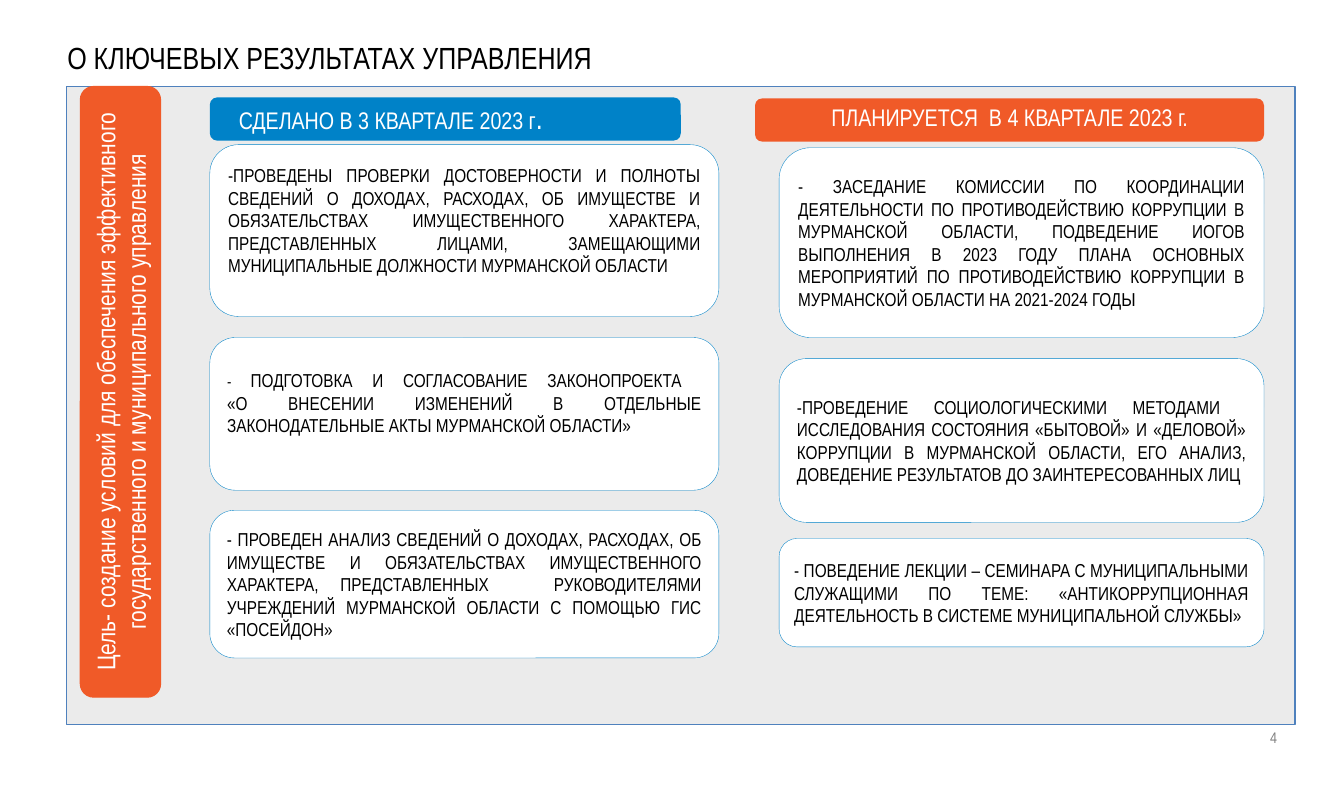
"""Build the slide on the key results of the department."""
import pptx
import pptx.dml.color
import pptx.enum.shapes
import pptx.enum.text
import pptx.util

Inches = pptx.util.Inches
Pt = pptx.util.Pt
SHAPES = pptx.enum.shapes.MSO_SHAPE
ALIGN = pptx.enum.text.PP_ALIGN
ANCHOR = pptx.enum.text.MSO_ANCHOR

CM_PER_INCH = 2.54
FONT = "Arial Narrow"
CARD_SIZE = 13.4
COLORS = {
    "white": "FFFFFF",
    "black": "000000",
    "panel": "EBEBEB",
    "frame": "4F81BD",
    "done": "0082C8",
    "planned": "F05A28",
    "number": "808080",
}
DONE = {
    "left": 2.09,
    "width": 5.07,
    "cards": [
        (1.44, 1.71, 0.25, [(
            "-ПРОВЕДЕНЫ ПРОВЕРКИ ДОСТОВЕРНОСТИ И ПОЛНОТЫ СВЕДЕНИЙ О ДОХОДАХ, "
            "РАСХОДАХ, ОБ ИМУЩЕСТВЕ И ОБЯЗАТЕЛЬСТВАХ ИМУЩЕСТВЕННОГО ХАРАКТЕРА, "
            "ПРЕДСТАВЛЕННЫХ ЛИЦАМИ, ЗАМЕЩАЮЩИМИ МУНИЦИПАЛЬНЫЕ ДОЛЖНОСТИ "
            "МУРМАНСКОЙ ОБЛАСТИ", CARD_SIZE)]),
        (3.36, 1.52, 0.27, [("- ", 11.5), (
            "ПОДГОТОВКА И СОГЛАСОВАНИЕ ЗАКОНОПРОЕКТА \n«О ВНЕСЕНИИ ИЗМЕНЕНИЙ В "
            "ОТДЕЛЬНЫЕ ЗАКОНОДАТЕЛЬНЫЕ АКТЫ МУРМАНСКОЙ ОБЛАСТИ»", CARD_SIZE)]),
        (5.08, 1.47, 0.05, [(
            "- ПРОВЕДЕН АНАЛИЗ СВЕДЕНИЙ О ДОХОДАХ, РАСХОДАХ, ОБ ИМУЩЕСТВЕ И "
            "ОБЯЗАТЕЛЬСТВАХ ИМУЩЕСТВЕННОГО ХАРАКТЕРА, ПРЕДСТАВЛЕННЫХ   "
            "РУКОВОДИТЕЛЯМИ УЧРЕЖДЕНИЙ МУРМАНСКОЙ ОБЛАСТИ С ПОМОЩЬЮ ГИС "
            "«ПОСЕЙДОН»", CARD_SIZE)]),
    ],
}
PLANNED = {
    "left": 7.76,
    "width": 4.83,
    "cards": [
        (1.47, 1.89, 0.05, [(
            "- ЗАСЕДАНИЕ КОМИССИИ ПО КООРДИНАЦИИ ДЕЯТЕЛЬНОСТИ ПО "
            "ПРОТИВОДЕЙСТВИЮ КОРРУПЦИИ В МУРМАНСКОЙ ОБЛАСТИ, ПОДВЕДЕНИЕ ИОГОВ "
            "ВЫПОЛНЕНИЯ В 2023 ГОДУ ПЛАНА ОСНОВНЫХ МЕРОПРИЯТИЙ ПО "
            "ПРОТИВОДЕЙСТВИЮ КОРРУПЦИИ В МУРМАНСКОЙ ОБЛАСТИ НА 2021-2024 ГОДЫ ",
            CARD_SIZE)]),
        (3.57, 1.63, 0.05, [(
            "-ПРОВЕДЕНИЕ СОЦИОЛОГИЧЕСКИМИ МЕТОДАМИ  ИССЛЕДОВАНИЯ СОСТОЯНИЯ "
            "«БЫТОВОЙ» И «ДЕЛОВОЙ» КОРРУПЦИИ В МУРМАНСКОЙ ОБЛАСТИ, ЕГО АНАЛИЗ, "
            "ДОВЕДЕНИЕ РЕЗУЛЬТАТОВ ДО ЗАИНТЕРЕСОВАННЫХ ЛИЦ", CARD_SIZE)]),
        (5.36, 1.08, 0.05, [(
            "- ПОВЕДЕНИЕ ЛЕКЦИИ – СЕМИНАРА С МУНИЦИПАЛЬНЫМИ СЛУЖАЩИМИ ПО ТЕМЕ: "
            "«АНТИКОРРУПЦИОННАЯ ДЕЯТЕЛЬНОСТЬ В СИСТЕМЕ МУНИЦИПАЛЬНОЙ СЛУЖБЫ»",
            CARD_SIZE)]),
    ],
}


def rgb(color):
    """Return the named colour."""
    return pptx.dml.color.RGBColor.from_string(COLORS[color])


def write(shape, pieces, color="black", align=ALIGN.LEFT, anchor=ANCHOR.MIDDLE,
          bottom=0.05):
    """Write pairs of text and size as one paragraph of a shape."""
    frame = shape.text_frame
    frame.word_wrap = True
    frame.auto_size = pptx.enum.text.MSO_AUTO_SIZE.NONE
    frame.vertical_anchor = anchor
    frame.margin_bottom = Inches(bottom)
    paragraph = frame.paragraphs[0]
    paragraph.alignment = align
    for text, size in pieces:
        for index, line in enumerate(text.split("\n")):
            if index:
                paragraph.add_line_break()
            run = paragraph.add_run()
            run.text = line
            run.font.name = FONT
            run.font.size = Pt(size)
            run.font.color.rgb = rgb(color)


def add_box(slide, kind, left, top, width, height, fill, line=None, weight=1):
    """Add a filled preset shape, outlined if a line colour is given."""
    box = slide.shapes.add_shape(
        kind, Inches(left), Inches(top), Inches(width), Inches(height))
    box.shadow.inherit = False
    box.fill.solid()
    box.fill.fore_color.rgb = rgb(fill)
    if line:
        box.line.color.rgb = rgb(line)
        box.line.width = Pt(weight)
    else:
        box.line.fill.background()
    return box


def add_label(slide, left, top, width, height, pieces, **style):
    """Add a text box."""
    label = slide.shapes.add_textbox(
        Inches(left), Inches(top), Inches(width), Inches(height))
    write(label, pieces, **style)


def add_title(slide, text):
    """Place and fill the title placeholder."""
    title = slide.shapes.title
    title.left, title.top = Inches(0.57), Inches(0.34)
    title.width, title.height = Inches(12.31), Inches(0.47)
    write(title, [(text, 21.9)], anchor=ANCHOR.TOP)


def add_goal(slide, text):
    """Add the goal bar that reads upwards along the panel's left side."""
    goal = add_box(slide, SHAPES.ROUNDED_RECTANGLE, -1.84, 3.5, 6.08, 0.8,
                   "planned", "planned", 0.75)
    goal.rotation = 270
    write(goal, [(text, 18.3)], color="white", align=ALIGN.CENTER)


def add_cards(slide, column):
    """Add the outlined cards of one column."""
    for top, height, bottom, pieces in column["cards"]:
        card = add_box(slide, SHAPES.ROUNDED_RECTANGLE, column["left"], top,
                       column["width"], height, "white", "done", 0.25)
        write(card, pieces, align=ALIGN.JUSTIFY, bottom=bottom)


def main():
    """Build and save the slide."""
    deck = pptx.Presentation()
    deck.slide_width = Inches(34 / CM_PER_INCH)
    deck.slide_height = Inches(20 / CM_PER_INCH)
    slide = deck.slides.add_slide(deck.slide_layouts[5])
    add_title(slide, "О КЛЮЧЕВЫХ РЕЗУЛЬТАТАХ УПРАВЛЕНИЯ")
    add_box(slide, SHAPES.RECTANGLE, 0.66, 0.86, 12.24, 6.35, "panel", "frame")
    add_goal(slide, "Цель- создание условий для обеспечения эффективного "
                    "государственного и муниципального управления")
    add_box(slide, SHAPES.ROUNDED_RECTANGLE, 2.09, 0.97, 4.69, 0.43, "done")
    add_label(slide, 2.28, 0.91, 4.3, 0.52,
              [("СДЕЛАНО В 3 КВАРТАЛЕ 2023 г", 17.2), (".", 21.9)], color="white")
    add_box(slide, SHAPES.ROUNDED_RECTANGLE, 7.52, 0.98, 5.07, 0.43, "planned")
    add_label(slide, 7.44, 0.97, 5.23, 0.39,
              [("ПЛАНИРУЕТСЯ  В 4 КВАРТАЛЕ 2023 г.", 17.2)],
              color="white", align=ALIGN.CENTER)
    for column in (DONE, PLANNED):
        add_cards(slide, column)
    add_label(slide, 10.65, 7.15, 2.17, 0.38, [("4", 11)],
              color="number", align=ALIGN.RIGHT)
    deck.save("out.pptx")


if __name__ == "__main__":
    main()
